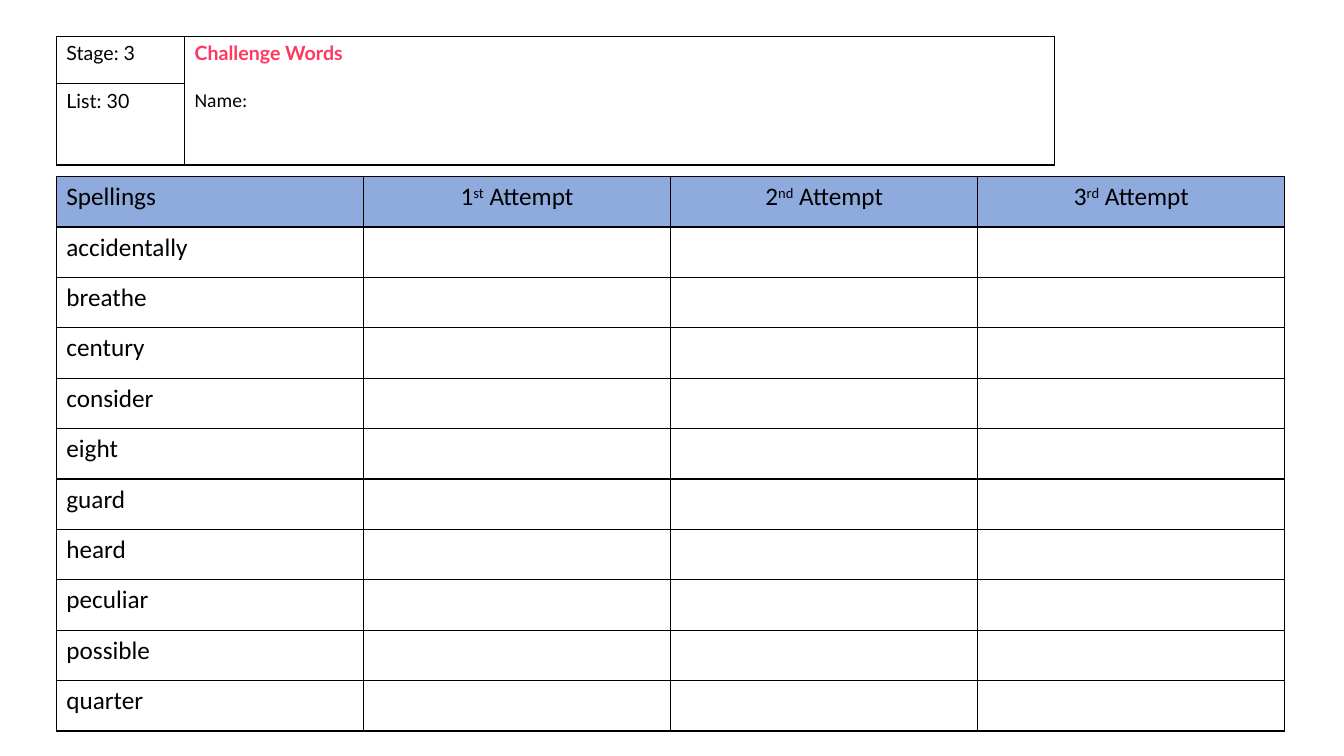
from lxml import etree
from pptx import Presentation
from pptx import util as u
from pptx.dml.color import RGBColor
from pptx.enum import text
from pptx.oxml.ns import qn

COLOURS = {"ink": "000000", "header": "8FAADC", "title": "FF3860"}
WORDS = ["accidentally", "breathe", "century", "consider", "eight",
         "guard", "heard", "peculiar", "possible", "quarter"]
ATTEMPTS = [("1", "st"), ("2", "nd"), ("3", "rd")]
STAGE, LIST = "Stage: 3", "List: 30"
TITLE, NAME = "Challenge Words", "Name:"

LEFT = 1.42
WORDS_TOP, WORD_COLUMN, WORD_ROW = 4.45, 7.74, 1.27
LABEL_TOP, LABEL_COLUMNS, LABEL_ROW = 0.91, (3.23, 21.92), 1.2


def add_span(para, words, size, font="Calibri", colour="ink", bold=False, raised=False):
    span = para.add_run()
    span.text = words
    span.font.size = u.Pt(size)
    span.font.name = font
    span.font.bold = bold
    span.font.color.rgb = RGBColor.from_string(COLOURS[colour])
    if raised:
        span.font._element.set("baseline", "30000")


def add_borders(cell):
    properties = cell._tc.get_or_add_tcPr()
    for place, side in enumerate(("lnL", "lnR", "lnT", "lnB")):
        line = etree.Element(qn("a:" + side), w=str(u.Pt(1)))
        fill = etree.SubElement(line, qn("a:solidFill"))
        etree.SubElement(fill, qn("a:srgbClr"), val=COLOURS["ink"])
        properties.insert(place, line)


def add_grid(page, top, widths, heights):
    """Add a plain black-ruled table, with sizes in centimetres."""
    frame = page.shapes.add_table(len(heights), len(widths), u.Cm(LEFT), u.Cm(top),
                                  u.Cm(sum(widths)), u.Cm(sum(heights)))
    table = frame.table
    table.first_row = table.horz_banding = False
    for column, width in zip(table.columns, widths):
        column.width = u.Cm(width)
    for row, height in zip(table.rows, heights):
        row.height = u.Cm(height)
    for cell in table.iter_cells():
        cell.fill.background()
        add_borders(cell)
    return table


def add_word_table(page):
    table = add_grid(page, WORDS_TOP, [WORD_COLUMN] * (len(ATTEMPTS) + 1),
                     [WORD_ROW] * (len(WORDS) + 1))
    for row, word in enumerate(["Spellings"] + WORDS):
        add_span(table.cell(row, 0).text_frame.paragraphs[0], word, 18)
    for column, (number, ending) in enumerate(ATTEMPTS, 1):
        para = table.cell(0, column).text_frame.paragraphs[0]
        para.alignment = text.PP_ALIGN.CENTER
        add_span(para, number, 18)
        add_span(para, ending, 18, raised=True)
        add_span(para, " Attempt", 18)
    for cell in table.rows[0].cells:
        cell.fill.solid()
        cell.fill.fore_color.rgb = RGBColor.from_string(COLOURS["header"])


def add_label_table(page):
    table = add_grid(page, LABEL_TOP, LABEL_COLUMNS, [LABEL_ROW] * 2)
    table.cell(0, 1).merge(table.cell(1, 1))
    for row, label in enumerate((STAGE, LIST)):
        add_span(table.cell(row, 0).text_frame.paragraphs[0], label, 14, "Lato")
    box = table.cell(0, 1).text_frame
    add_span(box.paragraphs[0], TITLE, 14, "Lato", "title", bold=True)
    para = box.add_paragraph()
    para.space_before = u.Pt(17)
    add_span(para, NAME, 14)


def main():
    deck = Presentation()
    deck.slide_width, deck.slide_height = u.Cm(33.87), u.Cm(19.05)
    page = deck.slides.add_slide(deck.slide_layouts[6])
    add_word_table(page)
    add_label_table(page)
    deck.save("out.pptx")


if __name__ == "__main__":
    main()
